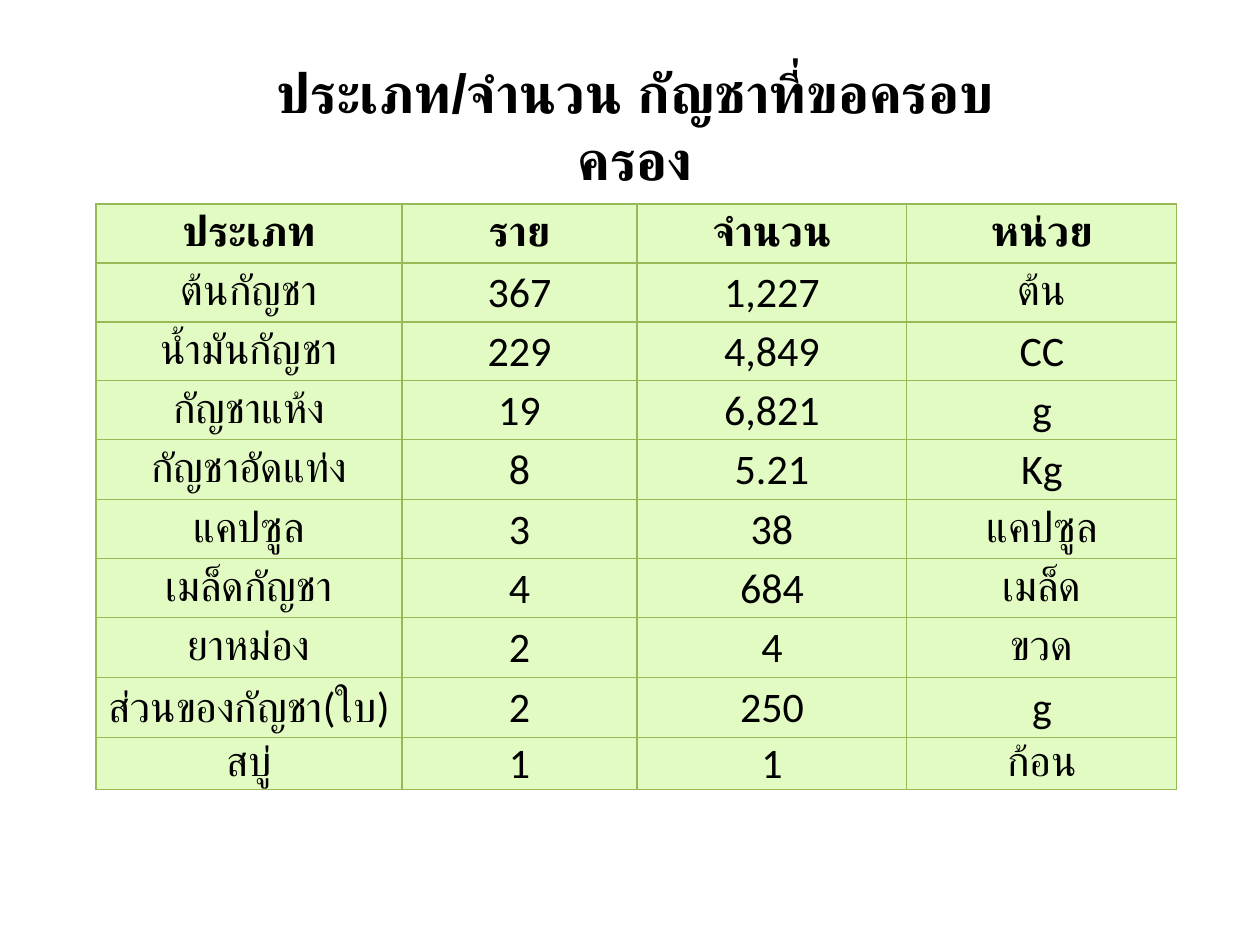
from lxml import etree
from pptx import Presentation, util as u
from pptx.dml.color import RGBColor
from pptx.enum import text
from pptx.oxml import ns

PX_PER_INCH = 126
BLACK = RGBColor(0x00, 0x00, 0x00)
PALE_GREEN = RGBColor(0xE2, 0xFB, 0xC2)
BORDER_GREEN = RGBColor(0x98, 0xB9, 0x55)

TITLE = "ประเภท/จำนวน กัญชาที่ขอครอบครอง"
COLUMN_WIDTHS = [306, 235, 270, 270]
ROW_HEIGHTS = [59] * 4 + [60] + [59] * 2 + [60] * 2 + [30]
ROWS = [
    ("ประเภท", "ราย", "จำนวน", "หน่วย"),
    ("ต้นกัญชา", "367", "1,227", "ต้น"),
    ("น้ำมันกัญชา", "229", "4,849", "CC"),
    ("กัญชาแห้ง", "19", "6,821", "g"),
    ("กัญชาอัดแท่ง", "8", "5.21", "Kg"),
    ("แคปซูล", "3", "38", "แคปซูล"),
    ("เมล็ดกัญชา", "4", "684", "เมล็ด"),
    ("ยาหม่อง", "2", "4", "ขวด"),
    ("ส่วนของกัญชา(ใบ)", "2", "250", "g"),
    ("สบู่", "1", "1", "ก้อน"),
]


def px(length):
    """Turn a length in px into EMU."""
    return u.Inches(length / PX_PER_INCH)


def add_run(paragraph, wording, font_name, size, bold):
    """Add a centred black run to a paragraph."""
    paragraph.alignment = text.PP_ALIGN.CENTER
    run = paragraph.add_run()
    run.text = wording
    run.font.name = font_name
    run.font.size = u.Pt(size)
    run.font.bold = bold
    run.font.color.rgb = BLACK


def add_title(slide):
    """Add the wrapped, vertically centred title."""
    frame = slide.shapes.add_textbox(px(210), px(66), px(850), px(118)).text_frame
    frame.word_wrap = True
    frame.vertical_anchor = text.MSO_ANCHOR.MIDDLE
    add_run(frame.paragraphs[0], TITLE, "Arial", 31.5, True)


def set_borders(cell):
    """Draw a thin green line on each side of a cell."""
    properties = cell._tc.get_or_add_tcPr()
    for index, side in enumerate(("lnL", "lnR", "lnT", "lnB")):
        line = etree.Element(ns.qn(f"a:{side}"), w=str(u.Pt(0.75)))
        fill = etree.SubElement(line, ns.qn("a:solidFill"))
        etree.SubElement(fill, ns.qn("a:srgbClr"), val=str(BORDER_GREEN))
        properties.insert(index, line)


def fill_cell(cell, wording, bold):
    """Give a cell its wording, fill, margins and borders."""
    cell.fill.solid()
    cell.fill.fore_color.rgb = PALE_GREEN
    cell.vertical_anchor = text.MSO_ANCHOR.MIDDLE
    cell.margin_left = cell.margin_right = cell.margin_top = px(1)
    cell.margin_bottom = 0
    add_run(cell.text_frame.paragraphs[0], wording, "Calibri", 24, bold)
    set_borders(cell)


def add_quantity_table(slide):
    """Add the table of types, cases, amounts and units."""
    table = slide.shapes.add_table(
        len(ROWS), len(COLUMN_WIDTHS), px(96), px(204),
        px(sum(COLUMN_WIDTHS)), px(sum(ROW_HEIGHTS))).table
    for column, width in zip(table.columns, COLUMN_WIDTHS):
        column.width = px(width)
    for index, (row, height, wordings) in enumerate(zip(table.rows, ROW_HEIGHTS, ROWS)):
        row.height = px(height)
        for cell, wording in zip(row.cells, wordings):
            fill_cell(cell, wording, index == 0)


def main():
    """Build and save the slide."""
    presentation = Presentation()
    presentation.slide_width = px(1260)
    presentation.slide_height = px(945)
    slide = presentation.slides.add_slide(presentation.slide_layouts[6])
    add_title(slide)
    add_quantity_table(slide)
    presentation.save("out.pptx")


if __name__ == "__main__":
    main()
